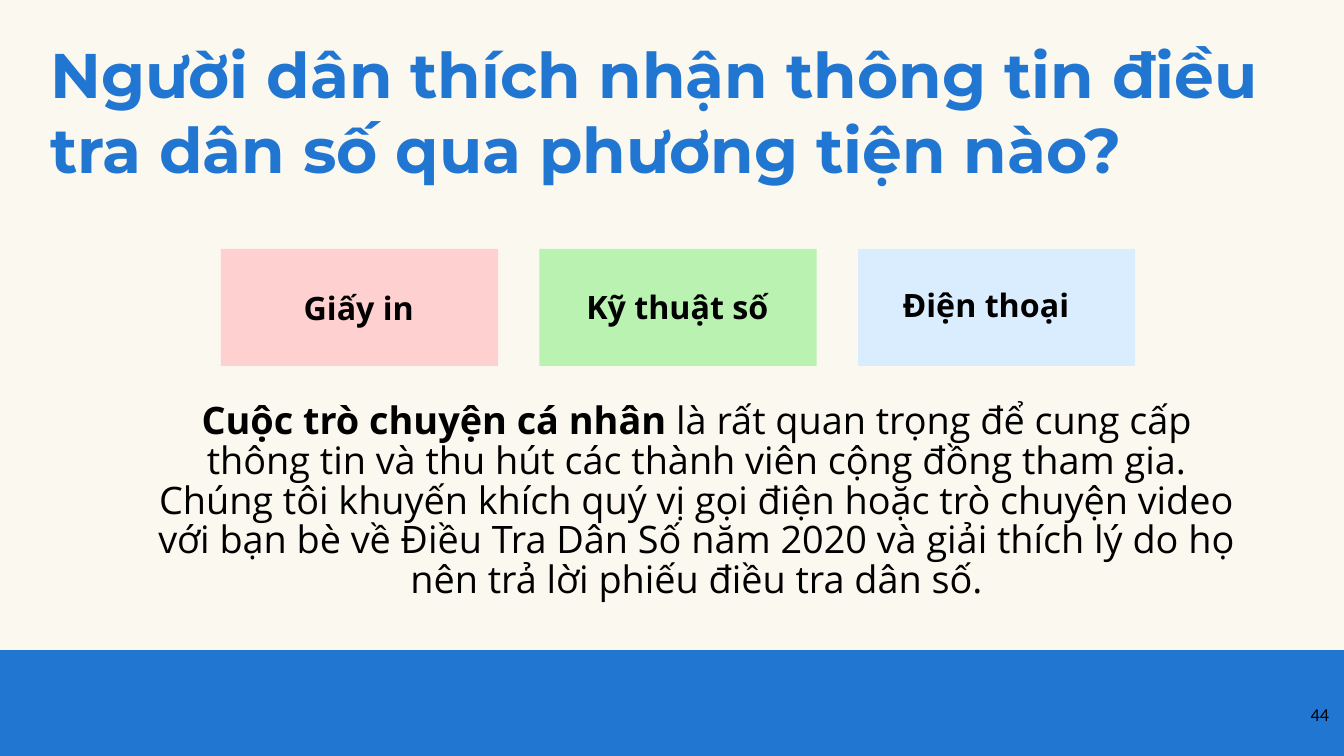
from dataclasses import dataclass

from pptx import Presentation
from pptx.dml.color import RGBColor
from pptx.enum import shapes, text
from pptx.util import Inches, Pt


@dataclass(frozen=True)
class Theme:
    paper: str = "FBF9EF"
    blue: str = "2176D2"
    black: str = "000000"
    pink: str = "FED0D0"
    green: str = "B9F2B1"
    sky: str = "DAEDFE"
    heading: str = "Montserrat"
    body: str = "Open Sans"
    number: str = "Calibri"
    title_size: int = 45
    message_size: int = 27
    label_size: int = 23
    number_size: int = 13


theme = Theme()


def add_rect(s, left, top, width, height, color):
    sp = s.shapes.add_shape(shapes.MSO_SHAPE.RECTANGLE, Inches(left), Inches(top),
                            Inches(width), Inches(height))
    sp.shadow.inherit = False
    sp.fill.solid()
    sp.fill.fore_color.rgb = RGBColor.from_string(color)
    sp.line.fill.background()


def write(sp, runs, font, size, color, align, bold=None):
    tf = sp.text_frame
    tf.word_wrap = True
    tf.auto_size = text.MSO_AUTO_SIZE.NONE
    tf.vertical_anchor = text.MSO_ANCHOR.TOP
    p = tf.paragraphs[0]
    p.alignment = align
    for words, run_bold in runs:
        r = p.add_run()
        r.text = words
        r.font.bold = run_bold
    p.font.name = font
    p.font.size = Pt(size)
    p.font.bold = bold
    p.font.color.rgb = RGBColor.from_string(color)
    return p


prs = Presentation()
prs.slide_width, prs.slide_height = Inches(13.33), Inches(7.5)
s = prs.slides.add_slide(prs.slide_layouts[5])
s.background.fill.solid()
s.background.fill.fore_color.rgb = RGBColor.from_string(theme.paper)

# Bottom band
add_rect(s, 0, 6.45, 13.33, 1.05, theme.blue)

# Title
title = s.shapes.title
title.left, title.top = Inches(0.4), Inches(0.3)
title.width, title.height = Inches(12.53), Inches(2.52)
p = write(title, [("Người dân thích nhận thông tin điều tra dân số qua phương tiện nào?", None)],
          theme.heading, theme.title_size, theme.blue, text.PP_ALIGN.LEFT, True)
p.space_before = Pt(0)

# Three channels: colour, label, label position
channels = [
    (theme.pink, "Giấy in", 1.78, 2.81),
    (theme.green, "Kỹ thuật số", 4.94, 2.8),
    (theme.sky, "Điện thoại", 8, 2.78),
]
for i, (color, label, left, top) in enumerate(channels):
    add_rect(s, 2.19 + i * 3.16, 2.47, 2.75, 1.16, color)
    sp = s.shapes.add_textbox(Inches(left), Inches(top), Inches(3.56), Inches(0.64))
    write(sp, [(label, None)], theme.body, theme.label_size, theme.black,
          text.PP_ALIGN.CENTER, True)

# Message
sp = s.shapes.add_textbox(Inches(1.34), Inches(3.94), Inches(11.14), Inches(2.12))
message = [
    ("Cuộc trò chuyện cá nhân ", True),
    ("là rất quan trọng để cung cấp thông tin và thu hút các thành viên cộng đồng "
     "tham gia. Chúng tôi khuyến khích quý vị gọi điện hoặc trò chuyện video với "
     "bạn bè về Điều Tra Dân Số năm 2020 và giải thích lý do họ nên trả lời phiếu "
     "điều tra dân số.", False),
]
p = write(sp, message, theme.body, theme.message_size, theme.black, text.PP_ALIGN.CENTER)
p.line_spacing = 0.88

# Slide number
sp = s.shapes.add_textbox(Inches(12.48), Inches(6.93), Inches(0.8), Inches(0.57))
write(sp, [("44", None)], theme.number, theme.number_size, theme.black, text.PP_ALIGN.RIGHT)

prs.save("out.pptx")
